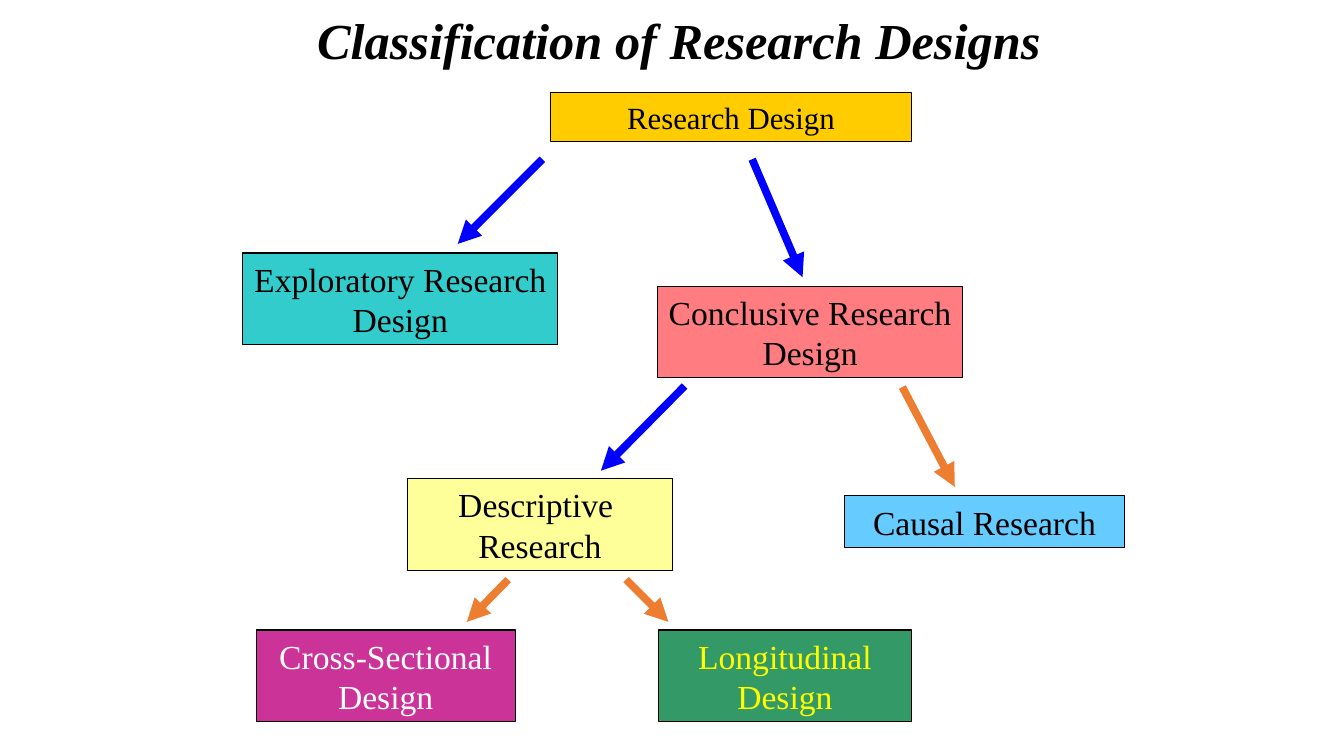
from lxml import etree
from pptx import Presentation
from pptx.dml.color import RGBColor
from pptx.enum.shapes import MSO_CONNECTOR, MSO_SHAPE
from pptx.enum.text import MSO_ANCHOR, PP_ALIGN
from pptx.oxml.ns import qn
from pptx.util import Inches, Pt

CENTER = PP_ALIGN.CENTER
MIDDLE = MSO_ANCHOR.MIDDLE
RECTANGLE = MSO_SHAPE.RECTANGLE
STRAIGHT = MSO_CONNECTOR.STRAIGHT

FONT = "Times New Roman"
COLORS = {
    "black": "000000", "white": "FFFFFF", "bright yellow": "FFFF00",
    "gold": "FFCC00", "teal": "33CCCC", "salmon": "FF7C80",
    "pale yellow": "FFFF99", "sky": "66CCFF", "magenta": "CC3399",
    "green": "339966", "blue": "0000FF", "orange": "ED7D31",
}

TITLE = "Classification of Research Designs"
TITLE_BOX = (2.65, 0.04, 8.17, 0.71)

# text, (left, top, width, height), fill, text colour, size
BOXES = [
    ("Research Design", (5.46, 0.92, 3.58, 0.48), "gold", "black", 22),
    ("Exploratory Research\nDesign", (2.41, 2.51, 3.12, 0.91), "teal", "black", 24),
    ("Conclusive Research\nDesign", (6.52, 2.84, 3.03, 0.91), "salmon", "black", 24),
    ("Descriptive \nResearch", (4.04, 4.75, 2.63, 0.91), "pale yellow", "black", 24),
    ("Causal Research", (8.38, 4.92, 2.77, 0.51), "sky", "black", 24),
    ("Cross-Sectional\nDesign", (2.54, 6.25, 2.57, 0.91), "magenta", "white", 24),
    ("Longitudinal\nDesign", (6.53, 6.25, 2.51, 0.91), "green", "bright yellow", 24),
]

# start, end, colour
ARROWS = [
    ((5.38, 1.58), (4.54, 2.42), "blue"),
    ((7.46, 1.58), (7.96, 2.75), "blue"),
    ((6.79, 3.83), (5.96, 4.67), "blue"),
    ((8.95, 3.84), (9.47, 4.83), "orange"),
    ((5.04, 5.75), (4.63, 6.17), "orange"),
    ((6.21, 5.75), (6.63, 6.17), "orange"),
]


def color(name):
    return RGBColor.from_string(COLORS[name])


def write_text(shape, text, size, color_name, emphasis=False):
    frame = shape.text_frame
    frame.text = text
    frame.word_wrap = True
    frame.vertical_anchor = MIDDLE
    for paragraph in frame.paragraphs:
        paragraph.alignment = CENTER
        paragraph.line_spacing = 1.0
        paragraph.space_before = Pt(0)
        for run in paragraph.runs:
            run.font.name = FONT
            run.font.size = Pt(size)
            run.font.bold = run.font.italic = emphasis
            run.font.color.rgb = color(color_name)


def add_title(slide):
    title = slide.shapes.title
    title.left, title.top, title.width, title.height = map(Inches, TITLE_BOX)
    write_text(title, TITLE, 36, "black", emphasis=True)


def add_box(slide, text, place, fill, text_color, size):
    box = slide.shapes.add_shape(RECTANGLE, *map(Inches, place))
    box.shadow.inherit = False
    box.fill.solid()
    box.fill.fore_color.rgb = color(fill)
    box.line.color.rgb = color("black")
    box.line.width = Pt(0.75)
    write_text(box, text, size, text_color)


def add_arrow(slide, start, end, color_name):
    arrow = slide.shapes.add_connector(STRAIGHT, *map(Inches, start + end))
    arrow.line.color.rgb = color(color_name)
    arrow.line.width = Pt(5.5)
    properties = arrow._element.spPr
    etree.SubElement(properties.find(qn("a:ln")), qn("a:tailEnd"), type="triangle")
    etree.SubElement(properties, qn("a:effectLst"))


def main():
    presentation = Presentation()
    presentation.slide_width = Inches(13.33)
    presentation.slide_height = Inches(7.5)
    slide = presentation.slides.add_slide(presentation.slide_layouts[5])
    add_title(slide)
    for box in BOXES:
        add_box(slide, *box)
    for arrow in ARROWS:
        add_arrow(slide, *arrow)
    presentation.save("out.pptx")


if __name__ == "__main__":
    main()
